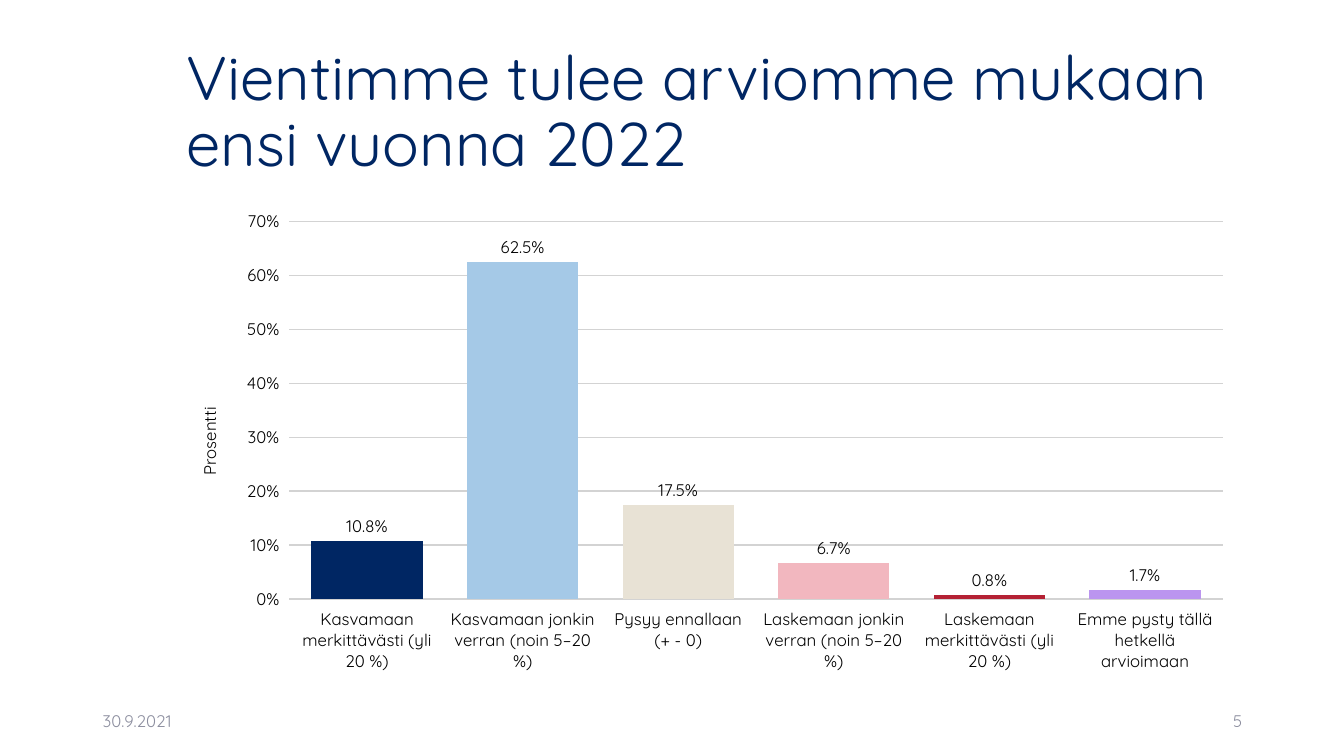
from pptx import Presentation
from pptx.chart.data import CategoryChartData
from pptx.dml.color import RGBColor
from pptx.enum.chart import XL_CHART_TYPE, XL_LABEL_POSITION, XL_TICK_MARK
from pptx.enum.text import MSO_ANCHOR, PP_ALIGN
from pptx.util import Inches, Pt

FONT = "Quicksand"
NAVY, GREY = "002663", "8C8E9F"
BARS = [
    ("Kasvamaan merkittävästi (yli 20 %)", 0.108, NAVY),
    ("Kasvamaan jonkin verran (noin 5–20 %)", 0.625, "A5C9E7"),
    ("Pysyy ennallaan (+ - 0)", 0.175, "E8E2D5"),
    ("Laskemaan jonkin verran (noin 5–20 %)", 0.067, "F2B7BF"),
    ("Laskemaan merkittävästi (yli 20 %)", 0.008, "B42134"),
    ("Emme pysty tällä hetkellä arvioimaan", 0.017, "BB95EF"),
]


def paint(fill, color):
    fill.solid()
    fill.fore_color.rgb = RGBColor.from_string(color)


def style(font, size, color):
    font.name = FONT
    font.size = Pt(size)
    font.bold = False
    font.color.rgb = RGBColor.from_string(color)


def add_text(slide, box, text, size, color, align=PP_ALIGN.LEFT, spacing=1.0):
    frame = slide.shapes.add_textbox(*map(Inches, box)).text_frame
    frame.word_wrap = True
    frame.vertical_anchor = MSO_ANCHOR.MIDDLE
    para = frame.paragraphs[0]
    para.text = text
    para.alignment = align
    para.line_spacing = spacing
    style(para.font, size, color)


def add_bars(slide, box):
    data = CategoryChartData(number_format="0.0%")
    data.categories = [name for name, _, _ in BARS]
    data.add_series("Series 1", [value for _, value, _ in BARS])
    chart = slide.shapes.add_chart(
        XL_CHART_TYPE.COLUMN_CLUSTERED, *map(Inches, box), data).chart
    chart.has_legend = False
    chart.has_title = False
    style(chart.font, 12, "000000")

    plot = chart.plots[0]
    plot.gap_width = 40
    plot.vary_by_categories = False
    series = plot.series[0]
    paint(series.format.fill, "4682B4")
    for index, (_, _, color) in enumerate(BARS):
        paint(series.points[index].format.fill, color)

    labels = series.data_labels
    labels.show_value = True
    labels.position = XL_LABEL_POSITION.OUTSIDE_END
    labels.number_format = "0.0%"
    labels.number_format_is_linked = False
    style(labels.font, 12, "000000")

    for axis in (chart.category_axis, chart.value_axis):
        axis.format.line.fill.background()
        axis.major_tick_mark = XL_TICK_MARK.OUTSIDE
    scale = chart.value_axis
    scale.minimum_scale, scale.maximum_scale = 0, 0.7
    scale.major_unit = 0.1
    scale.tick_labels.number_format = "0%"
    scale.tick_labels.number_format_is_linked = False
    grid = scale.major_gridlines.format.line
    grid.width = Pt(1)
    paint(grid.fill, "D3D3D3")
    title = scale.axis_title.text_frame.paragraphs[0]
    title.text = "Prosentti"
    style(title.font, 12, "000000")


def add_footer(slide, left, top, width, height):
    part = 3
    add_text(slide, (left, top, part, height), "30.9.2021", 12, GREY)
    add_text(slide, (left + width - part, top, part, height), "5", 12, GREY,
             PP_ALIGN.RIGHT)


def main():
    deck = Presentation()
    deck.slide_width, deck.slide_height = Inches(13.33), Inches(7.5)
    slide = deck.slides.add_slide(deck.slide_layouts[6])
    paint(slide.background.fill, "FFFFFF")
    add_text(slide, (1.75, 0.4, 10.59, 1.45),
             "Vientimme tulee arviomme mukaan ensi vuonna 2022", 44, NAVY,
             spacing=0.9)
    add_bars(slide, (1.75, 2, 10.59, 4.76))
    add_footer(slide, 0.92, 6.95, 11.5, 0.4)
    deck.save("out.pptx")


if __name__ == "__main__":
    main()
